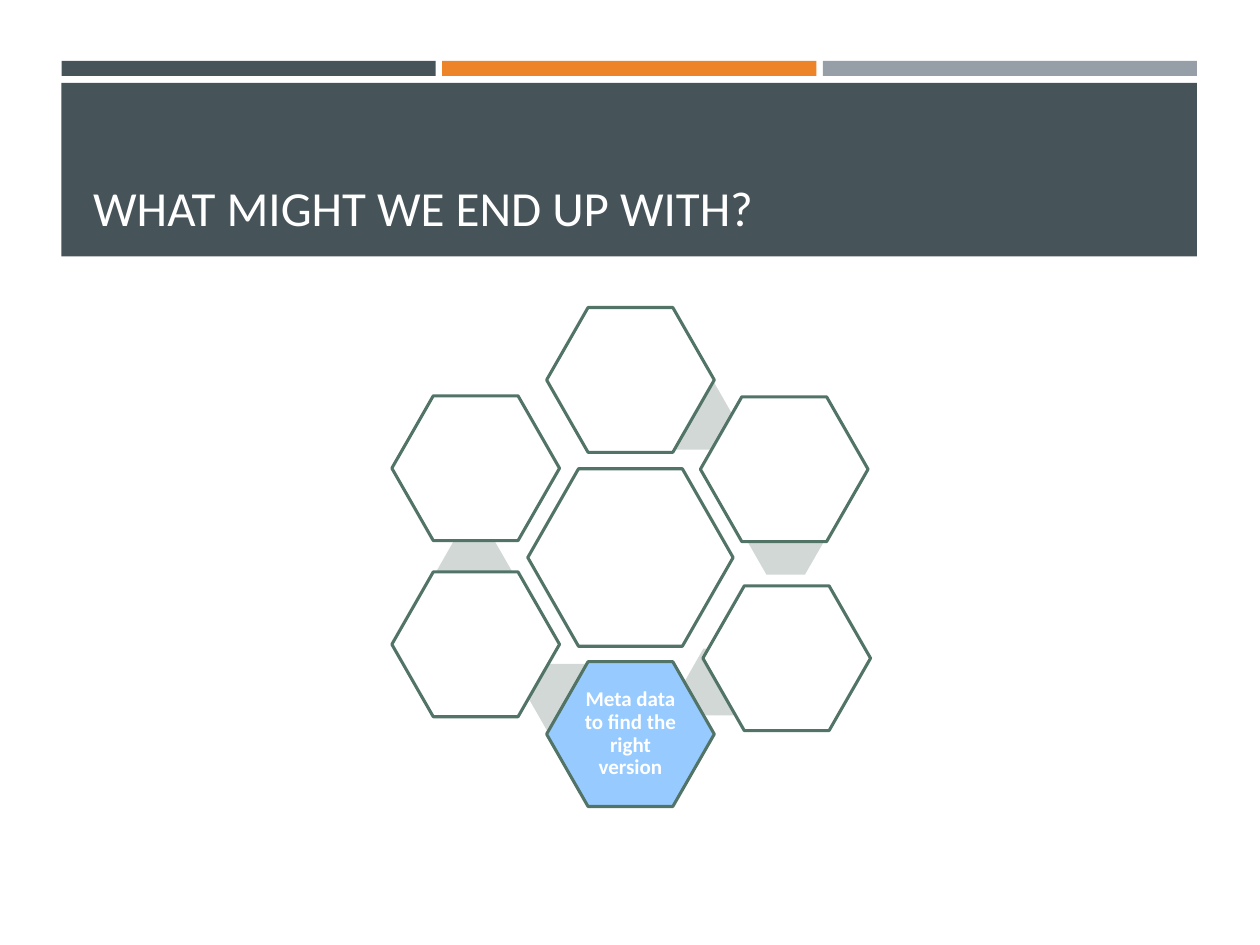
from pptx import Presentation
from pptx.dml.color import RGBColor
from pptx.enum.shapes import MSO_SHAPE
from pptx.enum.text import MSO_ANCHOR, PP_ALIGN
from pptx.util import Cm, Pt

RECTANGLE, HEXAGON = MSO_SHAPE.RECTANGLE, MSO_SHAPE.HEXAGON
MIDDLE, BOTTOM = MSO_ANCHOR.MIDDLE, MSO_ANCHOR.BOTTOM
LEFT, CENTER = PP_ALIGN.LEFT, PP_ALIGN.CENTER

THEME = {
    "font": "Calibri",
    "slate": "465359",
    "orange": "ED8428",
    "grey": "969FA7",
    "white": "FFFFFF",
    "outline": "527467",
    "link": "D2D8D5",
    "highlight": "97CBFF",
    "title_size": 28,
    "label_size": 12,
    "line_width": 1.75,
}

TITLE = "WHAT MIGHT WE END UP WITH?"
LABEL = "Meta data to find the right version"
BAR_COLORS = ["slate", "orange", "grey"]
MARGIN, BANNER_WIDTH, BAR_GAP = 1.24, 22.89, 0.13

HUB_CENTER, HUB_SIZE = (12.71, 11.24), (4.14, 3.58)
CELL_SIZE, LINK_SIZE, LABEL_SIZE = (3.38, 2.92), (1.55, 1.35), (2.26, 1.96)
LABEL_CENTER = (12.71, 14.8)
RING = [
    {"link": (14.01, 8.39), "cell": (12.71, 7.66), "fill": "white"},
    {"link": (15.84, 10.91), "cell": (15.81, 9.46), "fill": "white"},
    {"link": (14.57, 13.75), "cell": (15.86, 13.27), "fill": "white"},
    {"link": (11.42, 14.06), "cell": LABEL_CENTER, "fill": "highlight"},
    {"link": (9.56, 11.54), "cell": (9.59, 12.99), "fill": "white"},
    {"link": None, "cell": (9.59, 9.44), "fill": "white"},
]


def color(name):
    return RGBColor.from_string(THEME[name])


def centered(center, size):
    return [c - s / 2 for c, s in zip(center, size)] + list(size)


def add_filled(page, kind, frame, fill, outlined=False):
    shape = page.shapes.add_shape(kind, *map(Cm, frame))
    shape.shadow.inherit = False
    shape.fill.solid()
    shape.fill.fore_color.rgb = color(fill)
    if outlined:
        shape.line.color.rgb = color("outline")
        shape.line.width = Pt(THEME["line_width"])
    else:
        shape.line.fill.background()
    return shape


def add_hexagon(page, center, size, fill, outlined=True):
    shape = add_filled(page, HEXAGON, centered(center, size), fill, outlined)
    shape.adjustments[0] = 0.286


def add_text(page, frame, text, frame_format, para_format, font_format):
    box = page.shapes.add_textbox(*map(Cm, frame))
    para = box.text_frame.paragraphs[0]
    span = para.add_run()
    span.text = text
    span.font.color.rgb = color("white")
    formats = [
        (box.text_frame, {"word_wrap": True, **frame_format}),
        (para, para_format),
        (span.font, {"name": THEME["font"], **font_format}),
    ]
    for target, values in formats:
        for name, value in values.items():
            setattr(target, name, value)


def add_header(page):
    bar_width = (BANNER_WIDTH - BAR_GAP * (len(BAR_COLORS) - 1)) / len(BAR_COLORS)
    for index, fill in enumerate(BAR_COLORS):
        left = MARGIN + index * (bar_width + BAR_GAP)
        add_filled(page, RECTANGLE, (left, 1.23, bar_width, 0.3), fill)
    add_filled(page, RECTANGLE, (MARGIN, 1.67, BANNER_WIDTH, 3.5), "slate")
    add_text(page, (1.63, 1.9, 22.2, 3.0), TITLE,
             {"vertical_anchor": BOTTOM}, {"alignment": LEFT},
             {"size": Pt(THEME["title_size"])})


def add_ring(page):
    add_hexagon(page, HUB_CENTER, HUB_SIZE, "white")
    for item in RING:
        if item["link"]:
            add_hexagon(page, item["link"], LINK_SIZE, "link", outlined=False)
        add_hexagon(page, item["cell"], CELL_SIZE, item["fill"])
    sides = ("left", "right", "top", "bottom")
    insets = {f"margin_{side}": Cm(0.05) for side in sides}
    add_text(page, centered(LABEL_CENTER, LABEL_SIZE), LABEL,
             {"vertical_anchor": MIDDLE, **insets},
             {"alignment": CENTER, "line_spacing": 0.9},
             {"size": Pt(THEME["label_size"]), "bold": True})


def main():
    deck = Presentation()
    deck.slide_width, deck.slide_height = Cm(25.4), Cm(19.05)
    page = deck.slides.add_slide(deck.slide_layouts[6])
    add_header(page)
    add_ring(page)
    deck.save("out.pptx")


if __name__ == "__main__":
    main()
